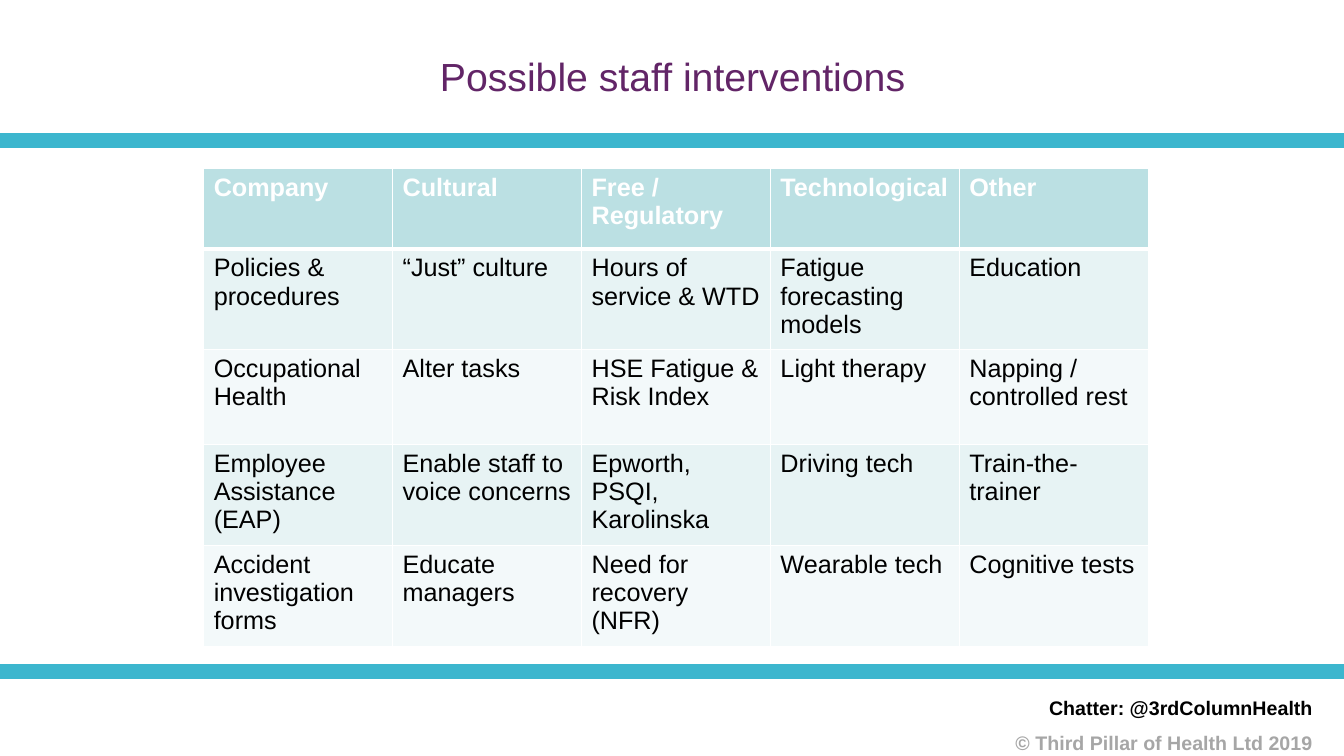
from lxml import etree
from pptx import Presentation
from pptx import util as u
from pptx.dml.color import RGBColor
from pptx.enum import shapes, text
from pptx.oxml.ns import qn

TEAL = RGBColor(0x3C, 0xB6, 0xCE)
PURPLE = RGBColor(0x62, 0x25, 0x67)
HEADER = RGBColor(0xBB, 0xE0, 0xE3)
BANDS = RGBColor(0xE7, 0xF3, 0xF4), RGBColor(0xF3, 0xF9, 0xFA)
WHITE = RGBColor(0xFF, 0xFF, 0xFF)
BLACK = RGBColor(0, 0, 0)
GRAY = RGBColor(0xA6, 0xA6, 0xA6)

INTERVENTIONS = [
    ["Company", "Cultural", "Free / Regulatory", "Technological", "Other"],
    ["Policies & procedures", "“Just” culture", "Hours of service & WTD",
     "Fatigue forecasting models", "Education"],
    ["Occupational Health", "Alter tasks", "HSE Fatigue & Risk Index",
     "Light therapy", "Napping / controlled rest"],
    ["Employee Assistance (EAP)", "Enable staff to voice concerns",
     "Epworth, PSQI, Karolinska", "Driving tech", "Train-the-trainer"],
    ["Accident investigation forms", "Educate managers",
     "Need for recovery (NFR)", "Wearable tech", "Cognitive tests"],
]


def write(p, content, size=18, color=BLACK, bold=False,
          align=text.PP_ALIGN.LEFT, spacing=None):
    p.alignment = align
    if spacing:
        p.line_spacing = spacing
    r = p.add_run()
    r.text = content
    r.font.name = "Arial"
    r.font.size = u.Pt(size)
    r.font.bold = bold
    r.font.color.rgb = color


def set_border(cell, side, width):
    ln = etree.SubElement(cell._tc.get_or_add_tcPr(), qn("a:" + side),
                          w=str(u.Pt(width)))
    fill = etree.SubElement(ln, qn("a:solidFill"))
    etree.SubElement(fill, qn("a:srgbClr"), val=str(WHITE))


class SlideBuilder:
    def __init__(self, prs):
        self.s = prs.slides.add_slide(prs.slide_layouts[6])
        self.width = prs.slide_width

    def rule(self, top):
        line = self.s.shapes.add_connector(
            shapes.MSO_CONNECTOR.STRAIGHT, 0, u.Inches(top),
            self.width, u.Inches(top))
        line.line.color.rgb = TEAL
        line.line.width = u.Pt(10.75)
        etree.SubElement(line._element.spPr, qn("a:effectLst"))

    def textbox(self, box, lines, anchor=text.MSO_ANCHOR.TOP, **style):
        sp = self.s.shapes.add_textbox(*map(u.Inches, box))
        tf = sp.text_frame
        tf.word_wrap = True
        tf.vertical_anchor = anchor
        for i, (content, color) in enumerate(lines):
            p = tf.add_paragraph() if i else tf.paragraphs[0]
            write(p, content, color=color, **style)

    def table(self, box, rows, header_height, row_height):
        table = self.s.shapes.add_table(
            len(rows), len(rows[0]), *map(u.Inches, box)).table
        for i, row in enumerate(rows):
            header = i == 0
            table.rows[i].height = u.Inches(header_height if header else row_height)
            for j, content in enumerate(row):
                cell = table.cell(i, j)
                for side in ("lnL", "lnR", "lnT", "lnB"):
                    heavy = (header and side == "lnB") or (i == 1 and side == "lnT")
                    set_border(cell, side, 3 if heavy else 1)
                cell.fill.solid()
                cell.fill.fore_color.rgb = HEADER if header else BANDS[(i - 1) % 2]
                write(cell.text_frame.paragraphs[0], content,
                      color=WHITE if header else BLACK, bold=header)


def main():
    prs = Presentation()
    prs.slide_width, prs.slide_height = u.Inches(13.33), u.Inches(7.5)
    slide = SlideBuilder(prs)
    for top in (1.39, 6.66):
        slide.rule(top)
    slide.textbox((0.67, 0.13, 12, 1.25), [("Possible staff interventions", PURPLE)],
                  anchor=text.MSO_ANCHOR.MIDDLE, size=28,
                  align=text.PP_ALIGN.CENTER)
    slide.table((2.02, 1.67, 9.37, 4.56), INTERVENTIONS, 0.8, 0.94)
    slide.textbox((8.79, 6.74, 4.33, 0.67),
                  [("Chatter: @3rdColumnHealth", BLACK),
                   ("© Third Pillar of Health Ltd 2019", GRAY)],
                  size=14, bold=True, align=text.PP_ALIGN.RIGHT, spacing=1.5)
    prs.save("out.pptx")


if __name__ == "__main__":
    main()
